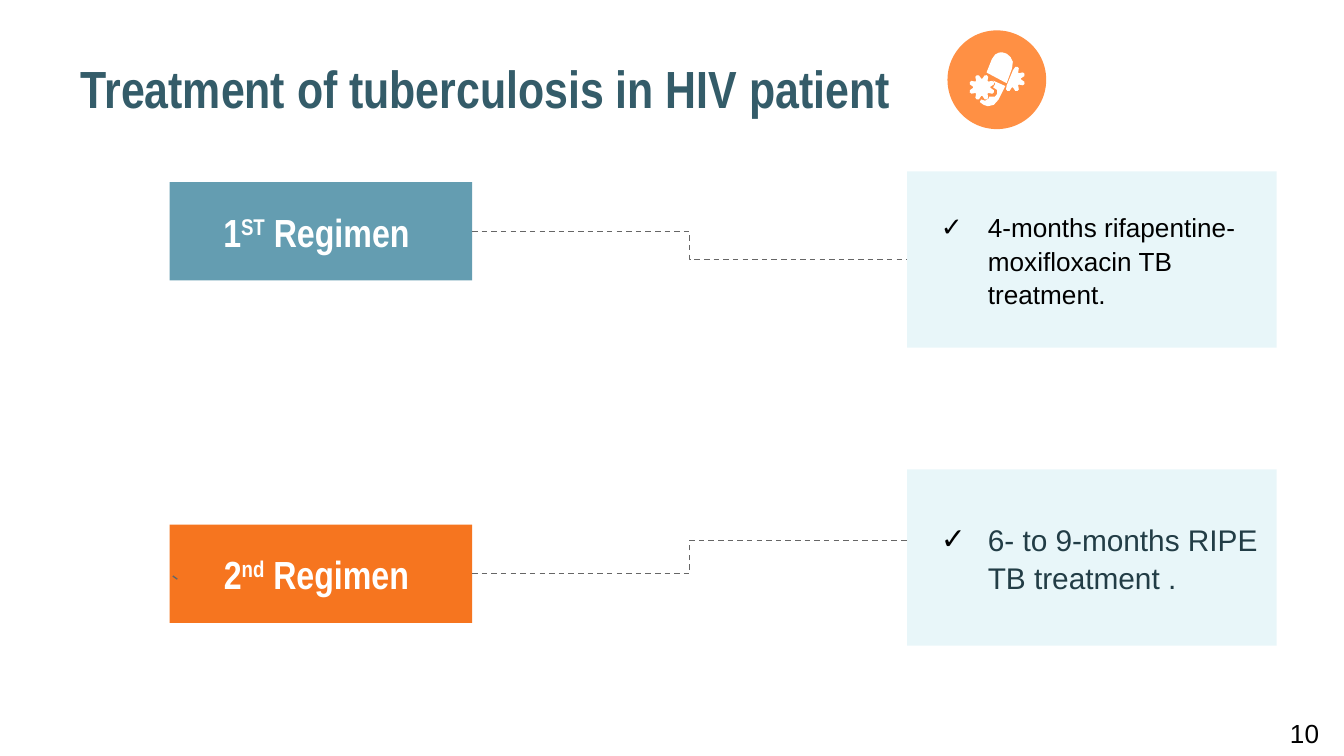
from dataclasses import dataclass
from math import cos, radians, sin

from lxml.etree import SubElement
from pptx import Presentation
from pptx.dml.color import RGBColor
from pptx.enum.dml import MSO_LINE
from pptx.enum.shapes import MSO_CONNECTOR as CONN, MSO_SHAPE as SHAPE
from pptx.enum.text import MSO_ANCHOR as ANCHOR, MSO_AUTO_SIZE as FIT, PP_ALIGN as ALIGN
from pptx.oxml.ns import qn
from pptx.util import Pt


@dataclass(frozen=True)
class Theme:
    title: str = "345C69"
    teal: str = "649DB1"
    orange: str = "F6751F"
    badge: str = "FF9044"
    panel: str = "4FBBD8"
    panel_alpha: int = 13
    line: str = "666666"
    dark: str = "223D46"
    black: str = "000000"
    white: str = "FFFFFF"
    narrow: str = "Arial Narrow"
    sans: str = "Arial"
    title_size: float = 28
    label_size: float = 21
    large_size: float = 16
    small_size: float = 14


@dataclass(frozen=True)
class Regimen:
    number: str
    suffix: str
    color: str
    top: float
    detail: str
    detail_size: float
    detail_color: str
    panel_top: float
    link_end: float


T = Theme()
LABEL_X, LABEL_W, LABEL_H = 90.9, 162, 52.7
PANEL_X, PANEL_W, PANEL_H = 486, 198, 94.5
REGIMENS = (
    Regimen("1", "ST", T.teal, 97.6, "4-months rifapentine-moxifloxacin TB treatment.",
            T.small_size, T.black, 91.8, 139),
    Regimen("2", "nd", T.orange, 281, "6- to 9-months RIPE TB treatment .",
            T.large_size, T.dark, 251.4, 289.5),
)
CAPSULE_TOP = [(528.5, 38.9), (531.4, 31.7), (533.2, 29.2), (535.2, 28.2), (537.1, 28.1),
               (539.3, 28.8), (541.4, 30.6), (542.6, 33.2), (542.2, 36.7), (539.3, 44.6)]
CAPSULE_BOTTOM = [(532.1, 43.2), (533.2, 45), (532.1, 46.8), (534.2, 48.2), (534.2, 50.4),
                  (533, 51.8), (529.9, 51.8), (529.9, 52.6), (527.8, 54), (525.6, 53.3),
                  (524.9, 54.7), (527, 56.2), (529.2, 56.9), (532.4, 56.2), (535, 53.3),
                  (538.6, 46.1)]


def rgb(color: str) -> RGBColor:
    return RGBColor.from_string(color)


def add_run(p, text: str, *, size: float, font: str, color: str,
            bold: bool = False, baseline: int = 0) -> None:
    r = p.add_run()
    r.text = text
    r.font.size, r.font.name, r.font.bold = Pt(size), font, bold
    r.font.color.rgb = rgb(color)
    if baseline:
        r._r.get_or_add_rPr().set("baseline", str(baseline * 1000))


def frame(s, align=ALIGN.LEFT, anchor=ANCHOR.MIDDLE):
    tf = s.text_frame
    tf.word_wrap, tf.auto_size, tf.vertical_anchor = True, FIT.NONE, anchor
    tf.margin_left = tf.margin_right = tf.margin_top = tf.margin_bottom = Pt(7.2)
    p = tf.paragraphs[0]
    p.alignment = align
    return p


def place(s, x: float, y: float, w: float, h: float) -> None:
    s.left, s.top, s.width, s.height = Pt(x), Pt(y), Pt(w), Pt(h)


def paint(s, color: str) -> None:
    s.shadow.inherit = False
    s.fill.solid()
    s.fill.fore_color.rgb = rgb(color)
    s.line.fill.background()


def add_block(slide, kind, x: float, y: float, w: float, h: float, color: str):
    s = slide.shapes.add_shape(kind, Pt(x), Pt(y), Pt(w), Pt(h))
    paint(s, color)
    return s


def add_outline(slide, points: list[tuple[float, float]], color: str) -> None:
    (x, y), *rest = [(px * 100, py * 100) for px, py in points]
    fb = slide.shapes.build_freeform(x, y, scale=Pt(0.01))
    fb.add_line_segments(rest, close=True)
    paint(fb.convert_to_shape(), color)


def gear(cx: float, cy: float, first: float, teeth: int) -> list[tuple[float, float]]:
    profile = ((-19, 4.6), (-9, 6.6), (0, 7), (9, 6.6), (19, 4.6))
    return [(cx + radius * cos(radians(first + 45 * i + turn)),
             cy + radius * sin(radians(first + 45 * i + turn)))
            for i in range(teeth) for turn, radius in profile]


def add_link(slide, kind, x1: float, y1: float, x2: float, y2: float) -> None:
    c = slide.shapes.add_connector(kind, Pt(x1), Pt(y1), Pt(x2), Pt(y2))
    c.line.color.rgb = rgb(T.line)
    c.line.width = Pt(0.75)
    c.line.dash_style = MSO_LINE.DASH
    SubElement(c._element.spPr, qn("a:effectLst"))


def add_check(p) -> None:
    p.line_spacing, p.space_before = 1.07, Pt(0)
    pPr = p._p.get_or_add_pPr()
    pPr.set("marL", str(Pt(36)))
    pPr.set("indent", str(Pt(-25.2)))
    SubElement(SubElement(pPr, qn("a:buClr")), qn("a:srgbClr"), val=T.black)
    SubElement(pPr, qn("a:buFont"), typeface=T.sans)
    SubElement(pPr, qn("a:buChar"), char="✓")


def add_icon(slide) -> None:
    add_block(slide, SHAPE.OVAL, 507.6, 16.3, 52.9, 52.9, T.badge)
    for points in (gear(542.4, 42.3, -67.5, 5), CAPSULE_BOTTOM,
                   CAPSULE_TOP, gear(526, 46.8, -67.5, 8)):
        add_outline(slide, points, T.white)


def add_regimen(slide, item: Regimen, body) -> None:
    s = add_block(slide, SHAPE.RECTANGLE, LABEL_X, item.top, LABEL_W, LABEL_H, item.color)
    p = frame(s, ALIGN.CENTER)
    for text, baseline in ((item.number, 0), (item.suffix, 30), (" Regimen ", 0)):
        add_run(p, text, size=T.label_size, font=T.narrow, color=T.white,
                bold=True, baseline=baseline)

    place(body, PANEL_X, item.panel_top, PANEL_W, PANEL_H)
    body.fill.solid()
    body.fill.fore_color.rgb = rgb(T.panel)
    tint = body._element.spPr.find(qn("a:solidFill")).find(qn("a:srgbClr"))
    SubElement(tint, qn("a:alpha"), val=str(T.panel_alpha * 1000))
    p = frame(body)
    add_check(p)
    add_run(p, item.detail, size=item.detail_size, font=T.sans, color=item.detail_color)

    add_link(slide, CONN.ELBOW, LABEL_X + LABEL_W, item.top + LABEL_H / 2,
             PANEL_X, item.link_end)


def main() -> None:
    prs = Presentation()
    prs.slide_width, prs.slide_height = Pt(720), Pt(405)
    slide = prs.slides.add_slide(prs.slide_layouts[3])

    title = slide.shapes.title
    place(title, 36, 32.4, 648, 29.5)
    add_run(frame(title), "Treatment of tuberculosis in HIV patient",
            size=T.title_size, font=T.narrow, color=T.title, bold=True)

    for item, idx in zip(REGIMENS, (1, 2)):
        add_regimen(slide, item, slide.placeholders[idx])
    add_link(slide, CONN.STRAIGHT, 95, 310.3, LABEL_X, 307.4)
    add_icon(slide)

    number = slide.shapes.add_textbox(Pt(684), Pt(381), Pt(36), Pt(24.2))
    p = frame(number, anchor=ANCHOR.TOP)
    number.text_frame.margin_top = number.text_frame.margin_bottom = Pt(3.6)
    add_run(p, "10", size=T.small_size, font=T.sans, color=T.black)
    prs.save("out.pptx")


if __name__ == "__main__":
    main()
